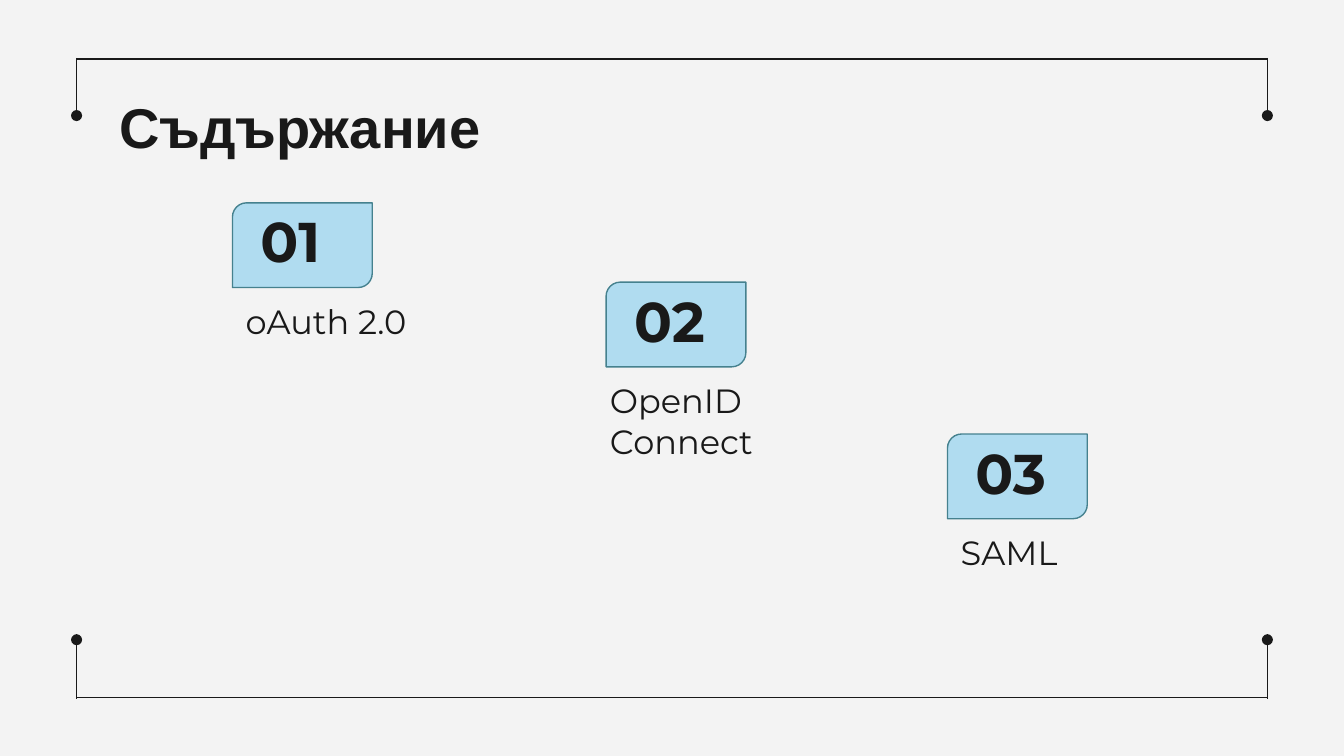
from dataclasses import dataclass

from lxml.etree import SubElement
from pptx import Presentation
from pptx.dml.color import RGBColor
from pptx.enum.shapes import MSO_CONNECTOR, MSO_SHAPE
from pptx.enum.text import MSO_ANCHOR
from pptx.oxml.ns import qn
from pptx.util import Inches, Pt

INK = "191919"
PAPER = "F3F3F3"
BADGE_FILL = "2AAFEB"
BADGE_LINE = "45818E"


@dataclass
class Topic:
    number: str
    label: str
    left: float
    top: float
    label_left: float
    label_width: float


TOPICS = [
    Topic("01", "oAuth 2.0", 1.73, 1.51, 1.73, 1.45),
    Topic("02", "OpenID Connect", 4.51, 2.1, 4.44, 1.35),
    Topic("03", "SAML", 7.05, 3.23, 7.05, 0.94),
]


def set_color(fmt, color: str) -> None:
    """Apply a hex color to a fill or a font."""
    if hasattr(fmt, "solid"):
        fmt.solid()
        fmt.fore_color.rgb = RGBColor.from_string(color)
    else:
        fmt.color.rgb = RGBColor.from_string(color)


def add_text(s, text: str, left: float, top: float, width: float, height: float, *,
             size: float = 18, font: str = "Montserrat", bold: bool = False,
             color: str = INK, anchor=MSO_ANCHOR.TOP) -> None:
    tf = s.shapes.add_textbox(Inches(left), Inches(top), Inches(width), Inches(height)).text_frame
    tf.word_wrap = True
    tf.vertical_anchor = anchor
    tf.margin_left = tf.margin_right = tf.margin_top = tf.margin_bottom = Inches(0.1)
    r = tf.paragraphs[0].add_run()
    r.text = text
    r.font.size = Pt(size)
    r.font.name = font
    r.font.bold = bold
    set_color(r.font, color)


def add_line(s, x1: float, y1: float, x2: float, y2: float, dot: bool = False) -> None:
    sp = s.shapes.add_connector(MSO_CONNECTOR.STRAIGHT,
                                Inches(x1), Inches(y1), Inches(x2), Inches(y2))
    sp.line.width = Pt(0.75)
    set_color(sp.line.fill, INK)
    sp_pr = sp._element.spPr
    if dot:
        SubElement(sp_pr.find(qn("a:ln")), qn("a:tailEnd"), type="oval")
    SubElement(sp_pr, qn("a:effectLst"))


def add_frame(s) -> None:
    left, right = 0.57, 9.43
    for edge, start, end in ((0.44, 0.43, 0.86), (5.19, 5.2, 4.76)):
        add_line(s, left, edge, right, edge)
        for x in (left, right):
            add_line(s, x, start, x, end, dot=True)


def add_badge(s, left: float, top: float) -> None:
    sp = s.shapes.add_shape(MSO_SHAPE.ROUND_2_DIAG_RECTANGLE,
                            Inches(left), Inches(top), Inches(1.04), Inches(0.63))
    sp.shadow.inherit = False
    sp.adjustments[0] = 1 / 6
    sp.adjustments[1] = 0
    set_color(sp.fill, BADGE_FILL)
    clr = sp._element.spPr.find(qn("a:solidFill")).find(qn("a:srgbClr"))
    SubElement(clr, qn("a:alpha"), val="33000")
    sp.line.width = Pt(0.75)
    set_color(sp.line.fill, BADGE_LINE)


def add_topic(s, topic: Topic) -> None:
    add_badge(s, topic.left, topic.top)
    add_text(s, topic.number, topic.left + 0.11, topic.top + 0.14, 0.83, 0.49,
             size=30, bold=True, anchor=MSO_ANCHOR.BOTTOM)
    add_text(s, topic.label, topic.label_left, topic.top + 0.63, topic.label_width, 0.8)


def main() -> None:
    # Widescreen 16:9 page
    prs = Presentation()
    prs.slide_width = Inches(10)
    prs.slide_height = Inches(10 * 9 / 16)
    s = prs.slides.add_slide(prs.slide_layouts[6])
    set_color(s.background.fill, PAPER)

    # Corner brackets and heading
    add_frame(s)
    add_text(s, "Съдържание", 0.79, 0.59, 8.43, 0.63, size=30, font="Arial", bold=True)

    # Numbered topics
    for topic in TOPICS:
        add_topic(s, topic)

    prs.save("out.pptx")


if __name__ == "__main__":
    main()
